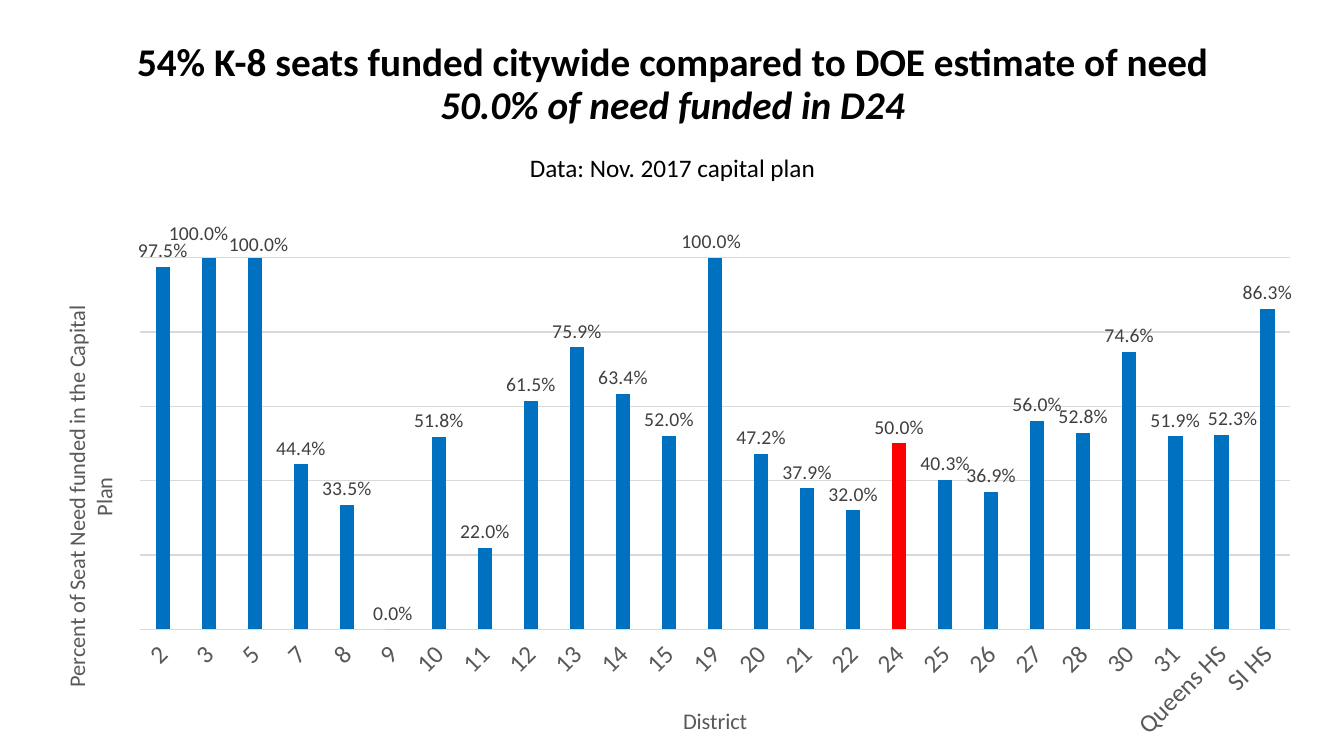
from lxml.etree import SubElement
from pptx import Presentation
from pptx.chart.data import CategoryChartData
from pptx.dml.color import RGBColor
from pptx.enum.chart import XL_CHART_TYPE as ChartType, XL_LABEL_POSITION as LabelPosition
from pptx.enum.chart import XL_TICK_LABEL_POSITION as TickLabels, XL_TICK_MARK as TickMark
from pptx.enum.text import MSO_ANCHOR as Anchor, PP_ALIGN as Align
from pptx.oxml.ns import qn
from pptx.util import Pt

EMU_PER_PX = 914400 / 100.8
FONT = "Calibri"
PERCENT = "0.0%"
COLOURS = {
    "black": "000000", "white": "FFFFFF", "bar": "0070C0", "highlight": "FF0000",
    "axis": "595959", "label": "404040", "grid": "D9D9D9",
}
TITLE_LINES = [
    ("54% K-8 seats funded citywide compared to DOE estimate of need",
     {"size": Pt(28), "bold": True, "italic": False}, 0),
    ("50.0% of need funded in D24", {"size": Pt(28), "bold": True, "italic": True}, 0),
    ("Data: Nov. 2017 capital plan", {"size": Pt(18), "bold": False, "italic": False}, 20),
]
FUNDED_BY_DISTRICT = {
    "2": 0.975, "3": 1, "5": 1, "7": 0.444, "8": 0.335, "9": 0, "10": 0.518,
    "11": 0.22, "12": 0.615, "13": 0.759, "14": 0.634, "15": 0.52, "19": 1,
    "20": 0.472, "21": 0.379, "22": 0.32, "24": 0.5, "25": 0.403, "26": 0.369,
    "27": 0.56, "28": 0.528, "30": 0.746, "31": 0.519, "Queens HS": 0.523, "SI HS": 0.863,
}
HIGHLIGHTED_DISTRICT = "24"
LABEL_SHIFTS = {"3": (-10, -8), "5": (4, 3), "19": (-4, 0), "Queens HS": (11, 0)}


def px(length):
    return round(length * EMU_PER_PX)


def colour(name):
    return RGBColor.from_string(COLOURS[name])


def apply_format(target, values):
    for name, value in values.items():
        setattr(target, name, value)


def format_font(font, colour_name, **values):
    apply_format(font, {"name": FONT, **values})
    font.color.rgb = colour(colour_name)


def format_line(line):
    line.width = Pt(0.75)
    line.color.rgb = colour("grid")


def add_layout(parent, position, **values):
    for layout in parent.findall(qn("c:layout")):
        parent.remove(layout)
    layout = SubElement(parent, qn("c:layout"))
    manual = SubElement(layout, qn("c:manualLayout"))
    for name, value in values.items():
        SubElement(manual, qn(f"c:{name}")).set("val", str(value))
    parent.insert(position, layout)


def add_title(slide, left, top, width, height):
    title = slide.shapes.title
    apply_format(title, {"left": px(left), "top": px(top), "width": px(width), "height": px(height)})
    title.fill.solid()
    title.fill.fore_color.rgb = colour("white")
    frame = title.text_frame
    apply_format(frame, {"word_wrap": True, "vertical_anchor": Anchor.MIDDLE})
    for index, (text, font_values, gap) in enumerate(TITLE_LINES):
        paragraph = frame.add_paragraph() if index else frame.paragraphs[0]
        apply_format(paragraph, {"alignment": Align.CENTER, "line_spacing": 0.9, "space_before": Pt(gap)})
        run = paragraph.add_run()
        run.text = text
        format_font(run.font, "black", **font_values)


def add_axis_title(axis, text, rotation):
    frame = axis.axis_title.text_frame
    frame.text = text
    format_font(frame.paragraphs[0].runs[0].font, "axis", size=Pt(16), bold=False)
    frame._txBody.bodyPr.set("rot", str(rotation))


def format_axes(chart):
    districts = chart.category_axis
    apply_format(districts, {"major_tick_mark": TickMark.NONE, "minor_tick_mark": TickMark.NONE,
                             "tick_label_position": TickLabels.LOW, "has_major_gridlines": False})
    format_font(districts.tick_labels.font, "axis", size=Pt(18))
    districts._element.find(qn("c:txPr")).find(qn("a:bodyPr")).set("rot", "-2700000")
    format_line(districts.format.line)
    add_axis_title(districts, "District", 0)

    percent = chart.value_axis
    apply_format(percent, {"visible": False, "minimum_scale": 0, "maximum_scale": 1,
                           "major_unit": 0.2, "has_major_gridlines": True})
    apply_format(percent.tick_labels, {"number_format": PERCENT, "number_format_is_linked": False})
    format_line(percent.major_gridlines.format.line)
    add_axis_title(percent, "Percent of Seat Need funded in the Capital Plan", -5400000)
    add_layout(percent.axis_title._element, 1, xMode="edge", yMode="edge", x=0.016, y=0.18)


def format_bars(plot, width, height):
    apply_format(plot, {"gap_width": 219, "overlap": -27, "vary_by_categories": False})
    series = plot.series[0]
    series.format.fill.solid()
    series.format.fill.fore_color.rgb = colour("bar")
    districts = list(FUNDED_BY_DISTRICT)
    highlighted = series.points[districts.index(HIGHLIGHTED_DISTRICT)].format.fill
    highlighted.solid()
    highlighted.fore_color.rgb = colour("highlight")

    labels = series.data_labels
    apply_format(labels, {"show_value": True, "position": LabelPosition.OUTSIDE_END,
                          "number_format": PERCENT, "number_format_is_linked": False})
    format_font(labels.font, "label", size=Pt(14))
    for district, (across, down) in LABEL_SHIFTS.items():
        index = districts.index(district)
        label = series.points[index].data_label
        label.position = LabelPosition.OUTSIDE_END
        format_font(label.font, "label", size=Pt(14))
        element = series._element.xpath(f"c:dLbls/c:dLbl[c:idx/@val='{index}']")[0]
        add_layout(element, 1, x=round(across / width, 3), y=round(down / height, 3))
        number_format = SubElement(element, qn("c:numFmt"))
        number_format.set("formatCode", PERCENT)
        number_format.set("sourceLinked", "0")
        element.insert(2, number_format)


def add_funding_chart(slide, left, top, width, height):
    data = CategoryChartData(number_format=PERCENT)
    data.categories = list(FUNDED_BY_DISTRICT)
    data.add_series("Series 1", list(FUNDED_BY_DISTRICT.values()))
    chart = slide.shapes.add_chart(
        ChartType.COLUMN_CLUSTERED, px(left), px(top), px(width), px(height), data).chart
    apply_format(chart, {"has_legend": False, "has_title": False})
    format_font(chart.font, "black", size=Pt(10))
    format_axes(chart)
    format_bars(chart.plots[0], width, height)
    plot_area = chart._chartSpace.chart.plotArea
    add_layout(plot_area, 0, layoutTarget="inner", xMode="edge", yMode="edge",
               x=0.081, y=0.098, w=0.906, h=0.691)


def main():
    presentation = Presentation()
    apply_format(presentation, {"slide_width": px(1344), "slide_height": px(756)})
    slide = presentation.slides.add_slide(presentation.slide_layouts[5])
    add_funding_chart(slide, 37, 205, 1270, 538)
    add_title(slide, 93, 38, 1159, 150)
    presentation.save("out.pptx")


if __name__ == "__main__":
    main()
